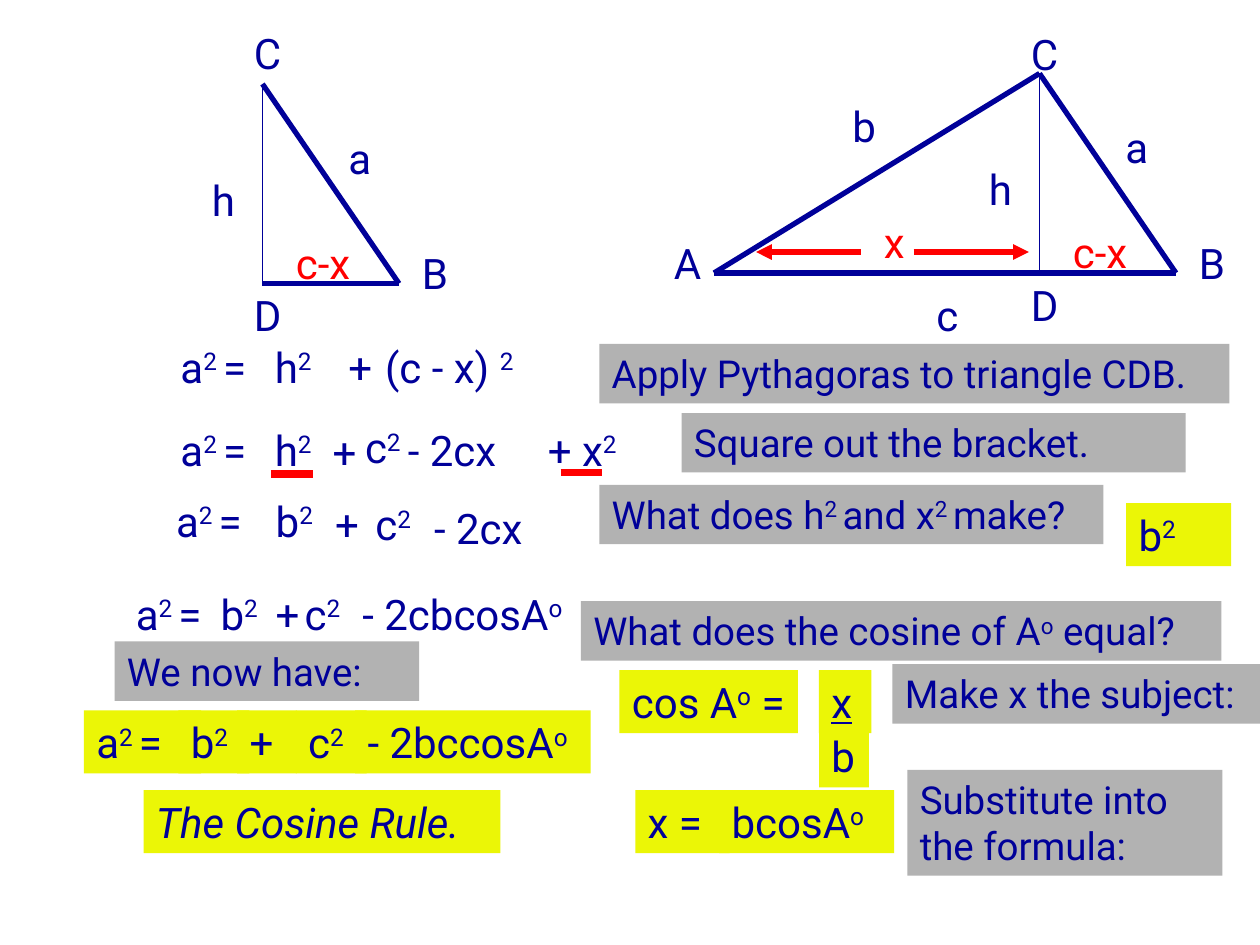
from dataclasses import dataclass
from typing import NamedTuple, Optional

from lxml.etree import SubElement
from pptx import Presentation
from pptx.dml.color import RGBColor as Rgb
from pptx.enum.shapes import MSO_CONNECTOR as Link, MSO_SHAPE as Form
from pptx.enum.text import MSO_ANCHOR as Anchor, MSO_AUTO_SIZE as Fit, PP_ALIGN as Align
from pptx.oxml.ns import qn
from pptx.util import Pt


@dataclass(frozen=True)
class Theme:
    font: str = "Roboto"
    ink: Rgb = Rgb(0x00, 0x00, 0x99)
    red: Rgb = Rgb(0xFF, 0x00, 0x00)
    grey: Rgb = Rgb(0xB2, 0xB2, 0xB2)
    gold: Rgb = Rgb(0xEB, 0xF6, 0x06)
    math: int = 24
    note: int = 22
    thin: float = 1
    bold: float = 3
    mark: float = 4.5


T = Theme()


@dataclass(frozen=True)
class Label:
    """Text with raised parts between carets, as in a^2^."""
    x: float
    y: float
    w: float
    text: str
    color: Rgb = T.ink
    fill: Optional[Rgb] = None
    size: int = T.math
    h: float = 36
    slant: bool = False
    under: bool = False


class Stroke(NamedTuple):
    x1: float
    y1: float
    x2: float
    y2: float
    color: Rgb = T.ink
    width: float = T.bold
    arrow: bool = False


def note(x: float, y: float, w: float, text: str, h: float = 34) -> Label:
    return Label(x, y, w, text, fill=T.grey, size=T.note, h=h)


def gold(x: float, y: float, w: float, text: str, **style) -> Label:
    return Label(x, y, w, text, fill=T.gold, **style)


def draw_label(shapes, item: Label) -> None:
    area = Pt(item.x), Pt(item.y), Pt(item.w), Pt(item.h)
    if item.fill is None:
        box = shapes.add_textbox(*area)
    else:
        box = shapes.add_shape(Form.RECTANGLE, *area)
        box.shadow.inherit = False
        box.fill.solid()
        box.fill.fore_color.rgb = item.fill
        box.line.fill.background()
    frame = box.text_frame
    frame.word_wrap = True
    frame.auto_size = Fit.SHAPE_TO_FIT_TEXT
    frame.vertical_anchor = Anchor.TOP
    para = frame.paragraphs[0]
    para.alignment = Align.LEFT
    for i, part in enumerate(item.text.split("^")):
        if not part:
            continue
        run = para.add_run()
        run.text = part
        font = run.font
        font.name, font.size = T.font, Pt(item.size)
        font.color.rgb = item.color
        if item.slant:
            font.italic = True
        if item.under:
            font.underline = True
        if i % 2:
            run._r.get_or_add_rPr().set("baseline", "30000")


def draw_stroke(shapes, item: Stroke) -> None:
    ends = (Pt(v) for v in item[:4])
    line = shapes.add_connector(Link.STRAIGHT, *ends)
    line.line.color.rgb = item.color
    line.line.width = Pt(item.width)
    if item.arrow:
        SubElement(line.line._get_or_add_ln(), qn("a:tailEnd"), type="triangle")
    SubElement(line._element.spPr, qn("a:effectLst"))


def draw_all(shapes, items: list) -> None:
    for item in items:
        draw = draw_stroke if isinstance(item, Stroke) else draw_label
        draw(shapes, item)


FULL = [
    Stroke(408, 156, 672, 156),
    Stroke(408, 156, 594, 42),
    Stroke(594, 42, 672, 156),
    Stroke(594, 42, 594, 156, width=T.thin),
    Label(378, 132, 48, "A"),
    Label(678, 132, 42, "B"),
    Label(582, 13, 48, "C"),
    Label(582, 156, 30, "D"),
    Label(636, 66, 30, "a"),
    Label(480, 54, 72, "b"),
    Label(528, 162, 54, "c"),
    Label(558, 90, 36, "h"),
    Label(498, 120, 54, "x", T.red),
    Stroke(492, 144, 432, 144, T.red, arrow=True),
    Stroke(522, 144, 588, 144, T.red, arrow=True),
    Label(606, 126, 66, "c-x", T.red),
]

HALF = [
    Stroke(150, 162, 228, 162),
    Stroke(150, 48, 228, 162),
    Stroke(150, 48, 150, 162, width=T.thin),
    Label(234, 138, 42, "B"),
    Label(138, 12, 48, "C"),
    Label(138, 162, 30, "D"),
    Label(192, 72, 30, "a"),
    Label(114, 96, 36, "h"),
    Label(162, 132, 66, "c-x", T.red),
]

STEPS = [
    Label(96, 191.5, 60, "a^2 ^="),
    Label(150, 191.5, 42, "h^2"),
    Label(192, 191.5, 30, "+"),
    Label(213, 191.5, 101.5, "(c - x) ^2"),

    Label(96, 239, 60, "a^2 ^="),
    Label(150, 239, 42, "h^2"),
    Label(183, 240, 30, "+"),
    Label(201.5, 237.5, 51, "c^2"),
    Label(226, 239, 71, "- 2cx"),
    Label(306, 239, 60, "+ x^2"),
    Stroke(154.8, 270.7, 178.6, 270.7, T.red, T.mark),
    Stroke(320.4, 270, 344.2, 270, T.red, T.mark),

    Label(93.5, 279.5, 60, "a^2 ^="),
    Label(150.5, 279.5, 53, "b^2"),
    Label(184.5, 281.5, 30, "+"),
    Label(207.5, 281.5, 56, "c^2"),
    Label(241, 283.5, 96.5, "- 2cx"),

    Label(70.5, 332.5, 60, "a^2 ^="),
    Label(119, 332.5, 45, "b^2"),
    Label(150.5, 332.5, 30, "+"),
    Label(167, 332.5, 48, "c^2"),
    Label(200, 332.5, 137, "- 2cbcosA^o"),
]

NOTES = [
    note(342.5, 196.5, 360, "Apply Pythagoras to triangle CDB."),
    note(389.5, 236, 288, "Square out the bracket."),
    note(342.5, 277, 288, "What does h^2 ^and x^2 ^make?"),
    gold(643.5, 287.5, 60, "b^2"),
    note(332, 343.5, 366, "What does the cosine of A^o^ equal?"),
    gold(354, 383, 102, "cos A^o^ ="),
    gold(468, 414, 28.5, "b"),
    gold(468, 383, 30, "x", under=True),
    note(510, 379.5, 210, "Make x the subject:"),
    gold(363, 451.5, 54, "x ="),
    gold(411, 451.5, 100, "bcosA^o"),
    note(518.5, 440, 180, "Substitute into the formula:", h=60.5),
    note(65.5, 366.5, 174, "We now have:"),
    gold(82, 451.5, 204, "The Cosine Rule.", slant=True),
]

RULE = [
    gold(x, 406, w, text) for x, w, text in (
        (48, 67, "a^2 ^="),
        (102, 40.5, "b^2"),
        (135.5, 34, "+"),
        (169, 40.5, "c^2"),
        (203, 134.5, "- 2bccosA^o"),
    )
]


def main() -> None:
    deck = Presentation()
    deck.slide_width, deck.slide_height = Pt(720), Pt(540)
    shapes = deck.slides.add_slide(deck.slide_layouts[6]).shapes
    for group in (FULL, HALF):
        draw_all(shapes.add_group_shape().shapes, group)
    draw_all(shapes, NOTES)
    draw_all(shapes, STEPS)
    draw_all(shapes.add_group_shape().shapes, RULE)
    deck.save("out.pptx")


if __name__ == "__main__":
    main()
